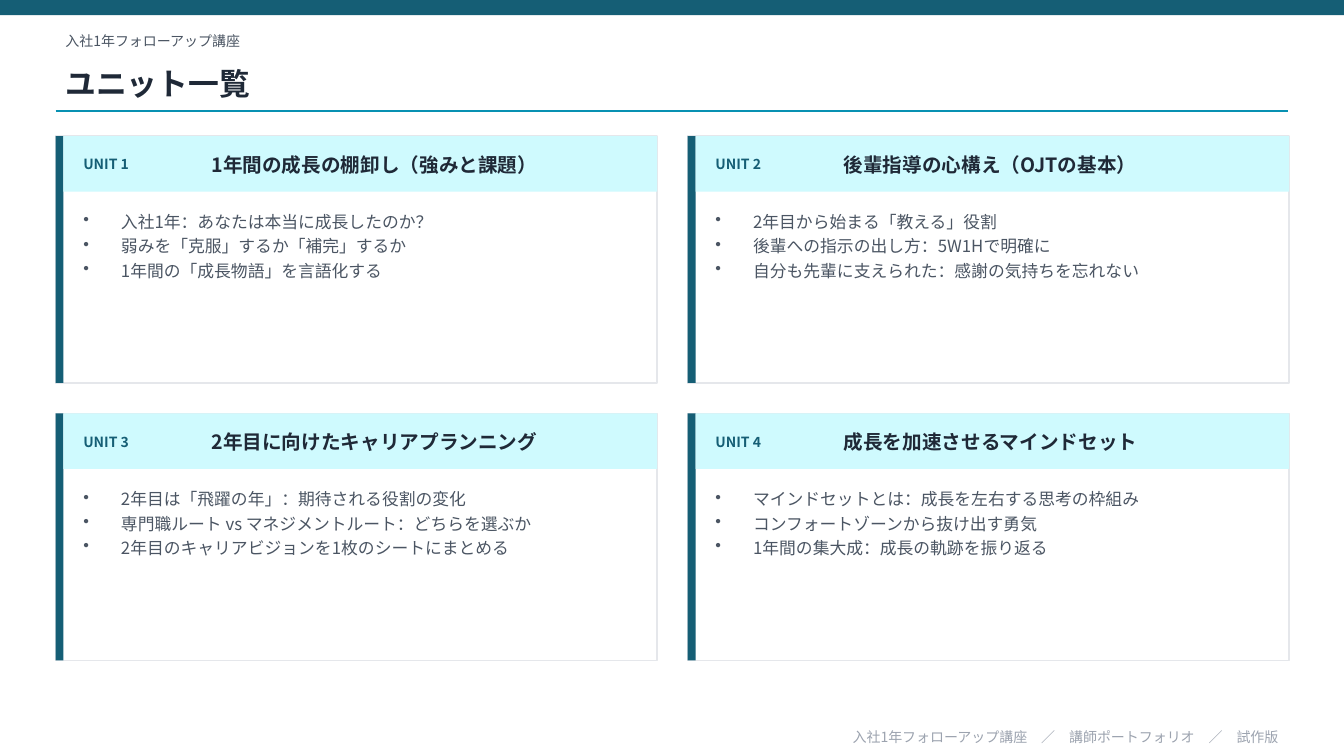
"""Build the unit overview slide of a follow-up course."""
from lxml import etree
from pptx import Presentation
from pptx.dml.color import RGBColor
from pptx.enum.shapes import MSO_CONNECTOR, MSO_SHAPE
from pptx.enum.text import MSO_ANCHOR, PP_ALIGN
from pptx.oxml.ns import qn
from pptx.util import Cm, Pt

RECTANGLE = MSO_SHAPE.RECTANGLE
STRAIGHT = MSO_CONNECTOR.STRAIGHT
TOP, MIDDLE = MSO_ANCHOR.TOP, MSO_ANCHOR.MIDDLE
LEFT, RIGHT = PP_ALIGN.LEFT, PP_ALIGN.RIGHT

COLORS = {
    "deep": "155E75",
    "accent": "0891B2",
    "pale": "CFFAFE",
    "white": "FFFFFF",
    "border": "E5E7EB",
    "ink": "1F2937",
    "body": "4B5563",
    "muted": "9CA3AF",
}

PAGE_WIDTH, PAGE_HEIGHT = 33.87, 19.05
MARGIN, CONTENT_WIDTH = 1.4, 31.06
CARD_TOP, CARD_WIDTH, CARD_HEIGHT = 3.43, 15.16, 6.22
COLUMN_STEP, ROW_STEP = 15.93, 6.99
BAR_WIDTH, HEADER_HEIGHT = 0.2, 1.4
BULLET_INDENT = 0.95

UNITS = [
    ("1年間の成長の棚卸し（強みと課題）", [
        "入社1年：あなたは本当に成長したのか？",
        "弱みを「克服」するか「補完」するか",
        "1年間の「成長物語」を言語化する",
    ]),
    ("後輩指導の心構え（OJTの基本）", [
        "2年目から始まる「教える」役割",
        "後輩への指示の出し方：5W1Hで明確に",
        "自分も先輩に支えられた：感謝の気持ちを忘れない",
    ]),
    ("2年目に向けたキャリアプランニング", [
        "2年目は「飛躍の年」：期待される役割の変化",
        "専門職ルート vs マネジメントルート：どちらを選ぶか",
        "2年目のキャリアビジョンを1枚のシートにまとめる",
    ]),
    ("成長を加速させるマインドセット", [
        "マインドセットとは：成長を左右する思考の枠組み",
        "コンフォートゾーンから抜け出す勇気",
        "1年間の集大成：成長の軌跡を振り返る",
    ]),
]


class SlideBuilder:
    """Hold the style and the current slide."""

    font_name = "Noto Sans CJK JP"

    def __init__(self, page):
        self.shapes = page.shapes

    def color(self, name):
        return RGBColor.from_string(COLORS[name])

    def rectangle(self, left, top, width, height, fill, border=None):
        shape = self.shapes.add_shape(RECTANGLE, Cm(left), Cm(top), Cm(width), Cm(height))
        shape.shadow.inherit = False
        shape.fill.solid()
        shape.fill.fore_color.rgb = self.color(fill)
        if border:
            shape.line.color.rgb = self.color(border)
            shape.line.width = Pt(1)
        else:
            shape.line.fill.background()

    def rule(self, left, top, width, color):
        line = self.shapes.add_connector(STRAIGHT, Cm(left), Cm(top), Cm(left + width), Cm(top))
        line.line.color.rgb = self.color(color)
        line.line.width = Pt(1)
        properties = line.element.find(qn("p:spPr"))
        etree.SubElement(properties, qn("a:effectLst"))

    def text(self, left, top, width, height, lines, size, color,
             bold=False, align=LEFT, anchor=MIDDLE, bullets=False):
        box = self.shapes.add_textbox(Cm(left), Cm(top), Cm(width), Cm(height))
        frame = box.text_frame
        frame.word_wrap = True
        frame.vertical_anchor = anchor
        frame.text = "\n".join(lines)
        for para in frame.paragraphs:
            para.alignment = align
            if bullets:
                self.bullet(para)
            for span in para.runs:
                self.format(span, size, color, bold)

    def bullet(self, para):
        para.space_after = Pt(3)
        properties = para._p.get_or_add_pPr()
        properties.set("marL", str(Cm(BULLET_INDENT)))
        properties.set("indent", str(-Cm(BULLET_INDENT)))
        etree.SubElement(properties, qn("a:buChar"), char="•")

    def format(self, span, size, color, bold):
        span.font.size = Pt(size)
        span.font.bold = bold
        span.font.color.rgb = self.color(color)
        span.font.name = self.font_name
        properties = span._r.get_or_add_rPr()
        etree.SubElement(properties, qn("a:ea"), typeface=self.font_name)

    def card(self, left, top, label, title, points):
        inner = left + BAR_WIDTH
        text_left = inner + 0.25
        self.rectangle(left, top, CARD_WIDTH, CARD_HEIGHT, "white", "border")
        self.rectangle(left, top, BAR_WIDTH, CARD_HEIGHT, "deep")
        self.rectangle(inner, top, CARD_WIDTH - BAR_WIDTH, HEADER_HEIGHT, "pale")
        self.text(text_left, top + 0.2, 3.05, 1.02, [label], 10, "deep", bold=True)
        self.text(left + 3.68, top + 0.2, 11.1, 1.02, [title], 14, "ink", bold=True)
        self.text(text_left, top + 1.78, 14.25, 4.06, points, 12, "body",
                  anchor=TOP, bullets=True)


def main():
    deck = Presentation()
    deck.slide_width, deck.slide_height = Cm(PAGE_WIDTH), Cm(PAGE_HEIGHT)
    builder = SlideBuilder(deck.slides.add_slide(deck.slide_layouts[6]))

    builder.rectangle(0, 0, PAGE_WIDTH, 0.38, "deep")
    builder.text(MARGIN, 0.64, CONTENT_WIDTH, 0.76, ["入社1年フォローアップ講座"], 10, "body")
    builder.text(MARGIN, 1.4, CONTENT_WIDTH, 1.4, ["ユニット一覧"], 22, "ink", bold=True)
    builder.rule(MARGIN, 2.8, CONTENT_WIDTH, "accent")

    for index, (title, points) in enumerate(UNITS):
        row, column = divmod(index, 2)
        builder.card(MARGIN + column * COLUMN_STEP, CARD_TOP + row * ROW_STEP,
                     f"UNIT {index + 1}", title, points)

    builder.text(MARGIN, 18.29, CONTENT_WIDTH, 0.56,
                 ["入社1年フォローアップ講座　／　講師ポートフォリオ　／　試作版"],
                 10, "muted", align=RIGHT)
    deck.save("out.pptx")


if __name__ == "__main__":
    main()
